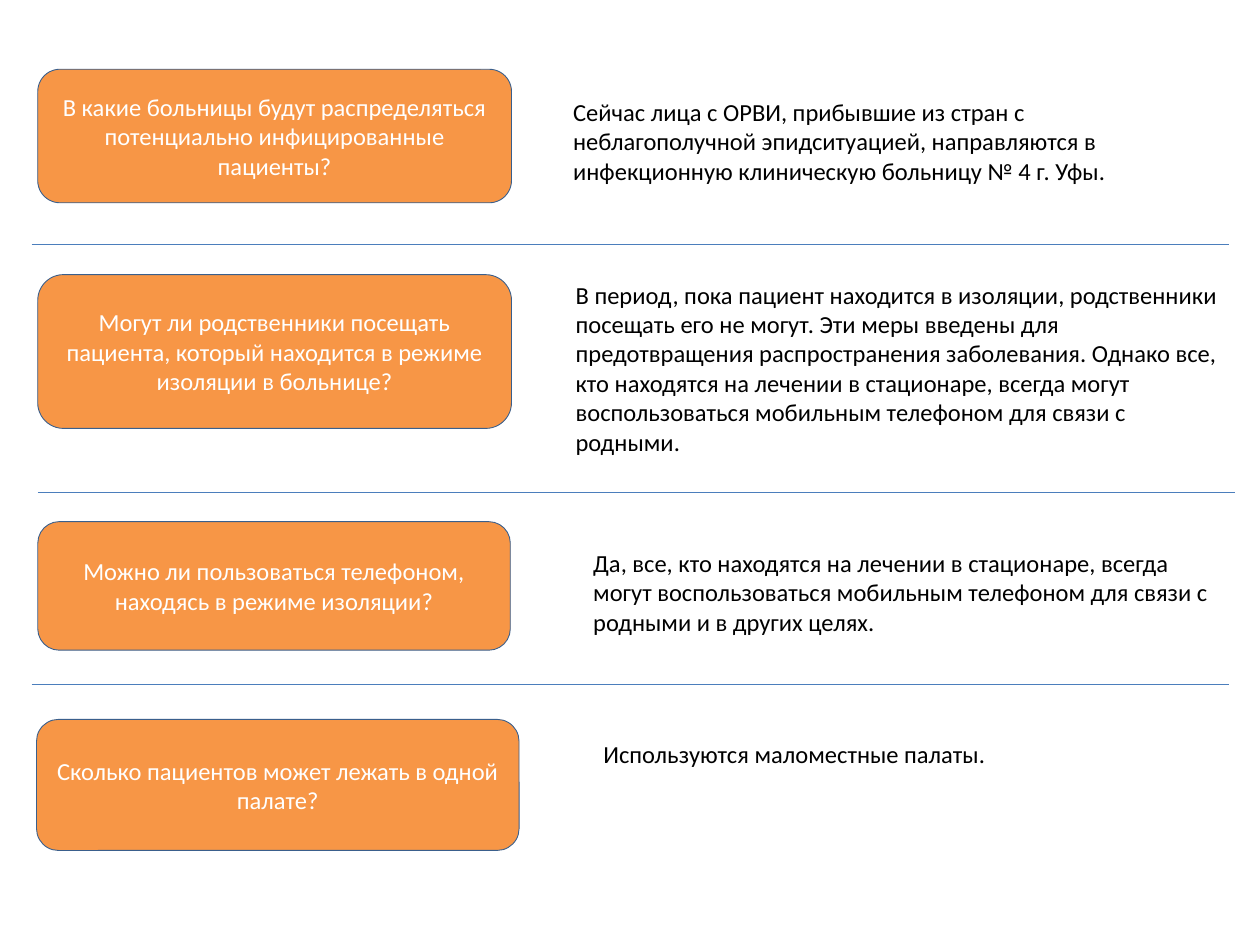
from dataclasses import dataclass
from pptx import Presentation
from pptx.dml.color import RGBColor
from pptx.enum.shapes import MSO_CONNECTOR as Link, MSO_SHAPE as Shape
from pptx.enum.text import MSO_ANCHOR as Anchor, MSO_AUTO_SIZE as Fit, PP_ALIGN as Align
from pptx.oxml.ns import qn
from pptx.slide import Slide
from pptx.text.text import TextFrame
from pptx.util import Inches, Pt


@dataclass(frozen=True)
class Theme:
    font: str = "Calibri"
    size: float = 14
    card: str = "F79646"
    edge: str = "3A5F8C"
    rule: str = "4B7EBC"
    light: str = "FFFFFF"
    dark: str = "000000"
    edge_width: float = 0.5
    rule_width: float = 0.75


@dataclass(frozen=True)
class Box:
    left: float
    top: float
    width: float
    height: float
    text: str

    def place(self) -> tuple:
        return tuple(map(Inches, (self.left, self.top, self.width, self.height)))


@dataclass(frozen=True)
class Rule:
    left: float
    top: float
    width: float = 9.5


THEME = Theme()

ASKED = (
    Box(0.3, 0.55, 3.76, 1.06,
        "В какие больницы будут распределяться потенциально инфицированные пациенты?"),
    Box(0.3, 2.18, 3.76, 1.22,
        "Могут ли родственники посещать пациента, который находится в режиме "
        "изоляции в больнице?"),
    Box(0.3, 4.14, 3.75, 1.02,
        "Можно ли пользоваться телефоном, находясь в режиме изоляции?"),
    Box(0.29, 5.71, 3.83, 1.04,
        "Сколько пациентов может лежать в одной палате?"),
)

REPLIES = (
    Box(4.45, 0.72, 5.01, 0.81,
        "Сейчас лица с ОРВИ, прибывшие из стран с неблагополучной эпидситуацией, "
        "направляются в инфекционную клиническую больницу № 4 г. Уфы."),
    Box(4.47, 2.17, 5.32, 1.51,
        "В период, пока пациент находится в изоляции, родственники посещать его не "
        "могут. Эти меры введены для предотвращения распространения заболевания. "
        "Однако все, кто находятся на лечении в стационаре, всегда могут "
        "воспользоваться мобильным телефоном для связи с родными."),
    Box(4.61, 4.3, 5.16, 0.81,
        "Да, все, кто находятся на лечении в стационаре, всегда могут "
        "воспользоваться мобильным телефоном для связи с родными и в других целях."),
    Box(4.69, 5.82, 4.69, 0.34, "Используются маломестные палаты."),
)

RULES = (Rule(0.25, 1.94), Rule(0.3, 3.91), Rule(0.25, 5.43))


def color(code: str) -> RGBColor:
    return RGBColor.from_string(code)


def write(frame: TextFrame, text: str, tint: str, align: Align) -> None:
    frame.text = text
    frame.word_wrap = True
    line = frame.paragraphs[0]
    line.alignment = align
    font = line.runs[0].font
    font.name, font.size = THEME.font, Pt(THEME.size)
    font.color.rgb = color(tint)


def draw_card(slide: Slide, box: Box) -> None:
    card = slide.shapes.add_shape(Shape.ROUNDED_RECTANGLE, *box.place())
    card.shadow.inherit = False
    card.fill.solid()
    card.fill.fore_color.rgb = color(THEME.card)
    card.line.color.rgb = color(THEME.edge)
    card.line.width = Pt(THEME.edge_width)
    card.text_frame.vertical_anchor = Anchor.MIDDLE
    write(card.text_frame, box.text, THEME.light, Align.CENTER)


def draw_reply(slide: Slide, box: Box) -> None:
    frame = slide.shapes.add_textbox(*box.place()).text_frame
    write(frame, box.text, THEME.dark, Align.LEFT)
    frame.auto_size = Fit.SHAPE_TO_FIT_TEXT


def draw_rule(slide: Slide, rule: Rule) -> None:
    top = Inches(rule.top)
    line = slide.shapes.add_connector(
        Link.STRAIGHT, Inches(rule.left), top, Inches(rule.left + rule.width), top)
    line.line.color.rgb = color(THEME.rule)
    line.line.width = Pt(THEME.rule_width)
    props = line._element.spPr
    props.append(props.makeelement(qn("a:effectLst"), {}))


def main() -> None:
    """Build the slide of hospital questions and answers."""
    deck = Presentation()
    deck.slide_width, deck.slide_height = Inches(10), Inches(7.5)
    slide = deck.slides.add_slide(deck.slide_layouts[6])
    for box in ASKED:
        draw_card(slide, box)
    for box in REPLIES:
        draw_reply(slide, box)
    for rule in RULES:
        draw_rule(slide, rule)
    deck.save("out.pptx")


if __name__ == "__main__":
    main()
